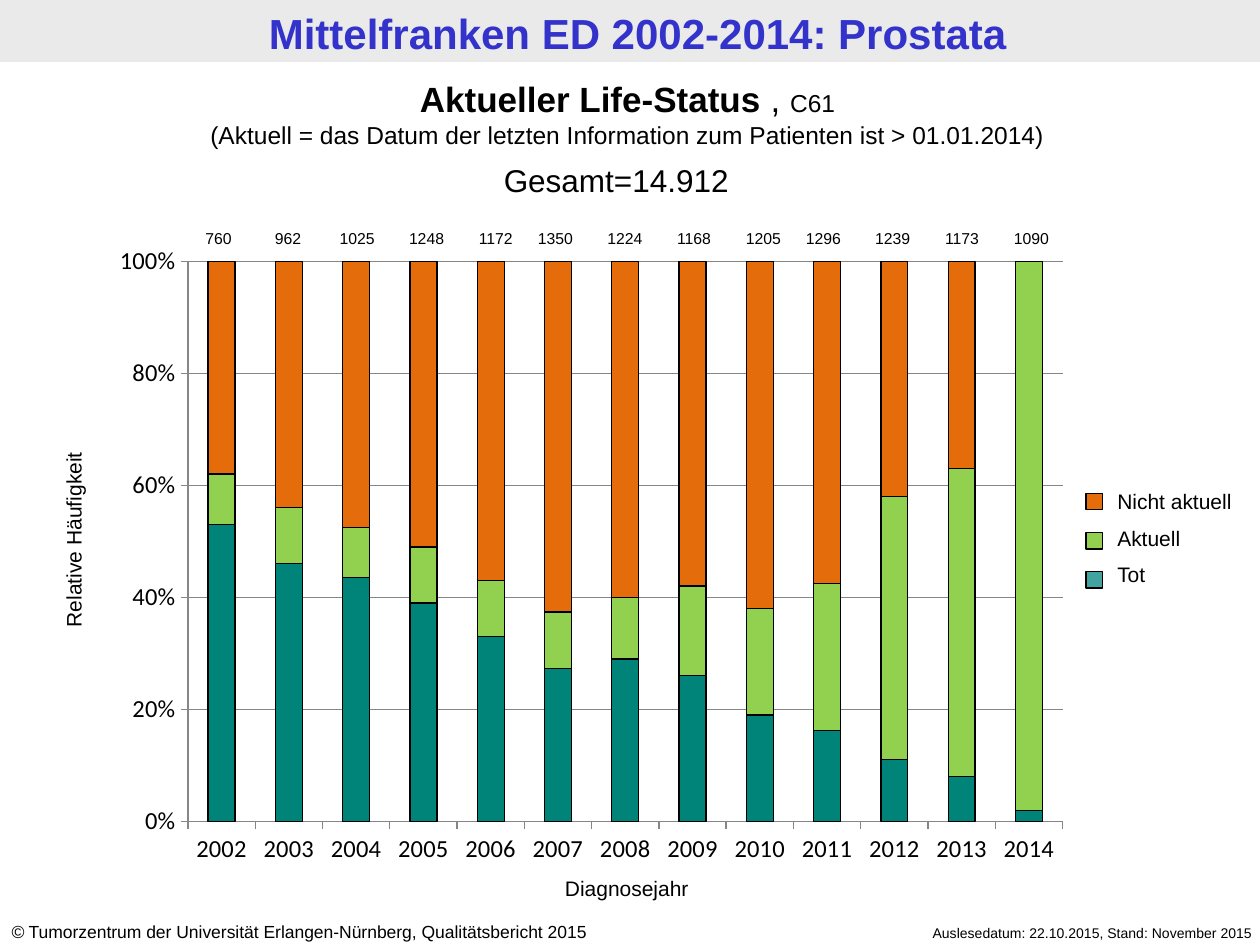
from dataclasses import dataclass

from lxml.etree import SubElement
from pptx import Presentation
from pptx.chart.data import CategoryChartData
from pptx.dml.color import RGBColor
from pptx.enum.chart import XL_CHART_TYPE as ChartType, XL_TICK_MARK as Tick
from pptx.enum.shapes import MSO_SHAPE as Shape
from pptx.enum.text import MSO_ANCHOR as Anchor, MSO_AUTO_SIZE as AutoSize, PP_ALIGN as Align
from pptx.oxml import parse_xml
from pptx.oxml.ns import nsdecls, qn
from pptx.util import Pt


@dataclass(frozen=True)
class Theme:
    font: str = "Arial"
    chart_font: str = "Calibri"
    ink: str = "000000"
    title: str = "3333CC"
    band: str = "EAEAEA"
    grid: str = "868686"
    dead: str = "008378"
    dead_key: str = "008380"
    current: str = "92D050"
    outdated: str = "E46C0A"
    title_size: float = 24
    heading_size: float = 20
    total_size: float = 18
    note_size: float = 14
    label_size: float = 12
    source_size: float = 10
    count_size: float = 9
    date_size: float = 8
    outline: float = 0.75


THEME = Theme()
YEARS = [str(year) for year in range(2002, 2015)]
STATUS = [
    ("Tot", THEME.dead, (53, 46, 44, 39, 33, 27, 29, 26, 19, 16, 11, 8, 2)),
    ("Aktuell", THEME.current, (9, 10, 9, 10, 10, 10, 11, 16, 19, 26, 47, 55, 98)),
    ("Nicht aktuell", THEME.outdated, (38, 44, 48, 51, 57, 62, 60, 58, 62, 57, 42, 37, 0)),
]
# Left edge of each run of evenly spaced case counts
COUNT_GROUPS = [
    (105.1, ("760", "962", "1025", "1248", "1172")),
    (297.6, ("1350", "1224", "1168", "1205")),
    (450.7, ("1296", "1239", "1173", "1090")),
]
COUNT_WIDTH = 39.6


def rgb(code):
    return RGBColor.from_string(code)


class PageBuilder:
    def __init__(self, page, theme):
        self.page = page
        self.theme = theme

    def style(self, span, size, color=None, bold=False, italic=False):
        font = span.font
        font.name, font.size = self.theme.font, Pt(size)
        font.bold, font.italic = bold, italic
        font.color.rgb = rgb(color or self.theme.ink)

    def text(self, area, lines, size, align=Align.LEFT, gap=0, color=None, bold=False,
             rotation=0, anchor=Anchor.TOP):
        box = self.page.shapes.add_textbox(*map(Pt, area))
        box.rotation = rotation
        frame = box.text_frame
        frame.text = "\n".join(lines)
        frame.word_wrap = True
        frame.auto_size = AutoSize.SHAPE_TO_FIT_TEXT
        frame.vertical_anchor = anchor
        for index, para in enumerate(frame.paragraphs):
            para.alignment = align
            if index:
                para.space_before = Pt(gap)
            for span in para.runs:
                self.style(span, size, color, bold)
        return box

    def mixed_text(self, area, paragraphs, align=Align.LEFT):
        """Place paragraphs made of (text, style options) spans."""
        box = self.text(area, [""] * len(paragraphs), self.theme.label_size, align)
        for para, spans in zip(box.text_frame.paragraphs, paragraphs):
            for words, options in spans:
                span = para.add_run()
                span.text = words
                self.style(span, **options)

    def rectangle(self, area, fill, outlined=True, opacity=100):
        box = self.page.shapes.add_shape(Shape.RECTANGLE, *map(Pt, area))
        box.shadow.inherit = False
        box.fill.solid()
        box.fill.fore_color.rgb = rgb(fill)
        if opacity < 100:
            color = box.fill._xPr.find(qn("a:solidFill"))[0]
            SubElement(color, qn("a:alpha"), val=str(opacity * 1000))
        if outlined:
            box.line.color.rgb = rgb(self.theme.ink)
            box.line.width = Pt(self.theme.outline)
        else:
            box.line.fill.background()

    def stacked_chart(self, area, categories, series_rows, plot_area):
        """Draw full-height stacked columns; plot_area is given in chart fractions."""
        data = CategoryChartData()
        data.categories = categories
        for name, _, values in series_rows:
            data.add_series(name, values)
        chart = self.page.shapes.add_chart(
            ChartType.COLUMN_STACKED_100, *map(Pt, area), data).chart
        chart.has_legend = chart.has_title = False
        chart.font.name, chart.font.size = self.theme.chart_font, Pt(self.theme.note_size)
        chart.font.color.rgb = rgb(self.theme.ink)

        plot = chart.plots[0]
        plot.gap_width, plot.overlap = 150, 100
        plot.vary_by_categories = False
        for series, (_, color, _) in zip(plot.series, series_rows):
            series.format.fill.solid()
            series.format.fill.fore_color.rgb = rgb(color)
            series.format.line.color.rgb = rgb(self.theme.ink)
            series.format.line.width = Pt(self.theme.outline)

        scale = chart.value_axis
        scale.minimum_scale, scale.maximum_scale, scale.major_unit = 0, 1, 0.2
        scale.has_major_gridlines = True
        scale.tick_labels.number_format = "0%"
        scale.tick_labels.number_format_is_linked = False
        for axis in (scale, chart.category_axis):
            axis.major_tick_mark, axis.minor_tick_mark = Tick.OUTSIDE, Tick.NONE
            axis.tick_labels.font.size = Pt(self.theme.note_size)
        for part in (scale, scale.major_gridlines, chart.category_axis):
            part.format.line.color.rgb = rgb(self.theme.grid)
            part.format.line.width = Pt(self.theme.outline)
        self.fix_plot_area(chart, plot_area)

    def fix_plot_area(self, chart, fractions):
        sizes = "".join(f'<c:{key} val="{value}"/>' for key, value in zip("xywh", fractions))
        layout = parse_xml(
            f'<c:layout {nsdecls("c")}><c:manualLayout><c:layoutTarget val="inner"/>'
            f'<c:xMode val="edge"/><c:yMode val="edge"/>{sizes}</c:manualLayout></c:layout>')
        plot_area = chart._chartSpace.chart.plotArea
        for old in plot_area.findall(qn("c:layout")):
            plot_area.remove(old)
        plot_area.insert(0, layout)


def main():
    deck = Presentation()
    deck.slide_width, deck.slide_height = Pt(720), Pt(540)
    builder = PageBuilder(deck.slides.add_slide(deck.slide_layouts[6]), THEME)

    builder.rectangle((0, 0, 720, 35.4), THEME.band, outlined=False)
    builder.text((4.4, 0.8, 720, 35.4), ["Mittelfranken ED 2002-2014: Prostata"],
                 THEME.title_size, Align.CENTER, color=THEME.title, bold=True,
                 anchor=Anchor.MIDDLE)
    builder.text((478.8, 524.9, 244, 17), ["Auslesedatum: 22.10.2015, Stand: November 2015"],
                 THEME.date_size, Align.RIGHT)
    source = {"size": THEME.source_size}
    builder.mixed_text((-0.6, 522.7, 377, 19.4), [[
        ("©", {**source, "italic": True}),
        (" Tumorzentrum der Universität Erlangen-Nürnberg, Qualitätsbericht 2015", source)]])

    builder.stacked_chart((56.9, 134.6, 561.6, 368), YEARS, STATUS, (0.09, 0.04, 0.89, 0.87))
    builder.text((-44.6, 297.4, 173.5, 22), ["Relative Häufigkeit"], THEME.label_size,
                 Align.CENTER, rotation=270)
    builder.text((277.2, 496.8, 162, 22), ["Diagnosejahr"], THEME.label_size, Align.CENTER)
    for left, counts in COUNT_GROUPS:
        for index, count in enumerate(counts):
            builder.text((left + index * COUNT_WIDTH, 127.2, COUNT_WIDTH, 18), [count],
                         THEME.count_size, Align.CENTER)

    legend = STATUS[::-1]
    builder.text((631.4, 275.8, 88.6, 65.5), [name for name, _, _ in legend],
                 THEME.label_size, gap=6.5)
    keys = [(THEME.outdated, 100), (THEME.current, 100), (THEME.dead_key, 74)]
    for index, (color, opacity) in enumerate(keys):
        builder.rectangle((620.6, 282 + index * 22.3, 9.4, 9.4), color, opacity=opacity)

    note = {"size": THEME.note_size}
    builder.mixed_text((-2.9, 41, 723, 48.2), [
        [("Aktueller Life-Status ", {"size": THEME.heading_size, "bold": True}),
         (", ", {"size": THEME.heading_size}), ("C61", note)],
        [("(Aktuell = das Datum der letzten Information zum Patienten ist > 01.01.2014)", note)],
    ], Align.CENTER)
    builder.text((280.8, 88.6, 158.4, 28.8), ["Gesamt=14.912"], THEME.total_size)

    deck.save("out.pptx")


if __name__ == "__main__":
    main()
